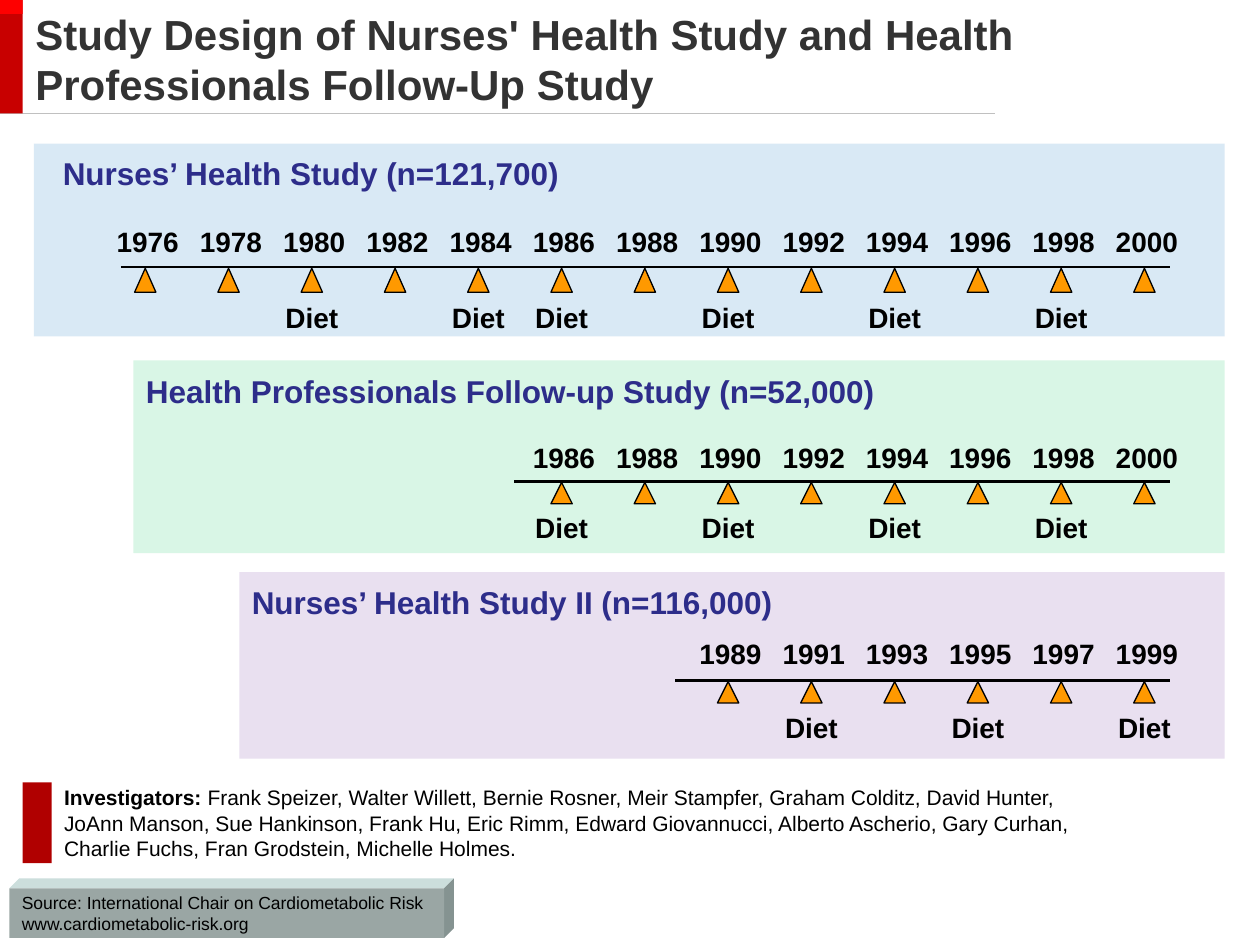
"""Build the study design slide with three cohort timelines."""
from pptx import Presentation
from pptx.dml.color import RGBColor as RGB
from pptx.enum.shapes import MSO_CONNECTOR as CON, MSO_SHAPE as SHP
from pptx.enum.text import MSO_ANCHOR as ANC, MSO_AUTO_SIZE as AUTO, PP_ALIGN as ALN
from pptx.oxml.ns import qn
from pptx.util import Pt
from lxml.etree import SubElement as Sub

HUES = {
    "red": "C80000", "bright": "FE0000", "brick": "B00000", "rule": "C0C0C0",
    "blue": "0070C0", "green": "00C459", "plum": "7030A0", "navy": "2D2D8A",
    "title": "333333", "black": "000000", "white": "FFFFFF", "mark": "FF9900",
    "front": "9AA6A4", "top": "CCDEDC", "side": "859391",
}
STEP = 47.58
LAST = 654

STUDIES = [
    dict(hue="blue", panel=(19.4, 82.1, 680.4, 110.2),
         name="Nurses’ Health Study (n=121,700)", head=(28.8, 83.5, 635.8, 31),
         years=range(1976, 2001, 2), diet=(1980, 1984, 1986, 1990, 1994, 1998),
         start=69.1, axis=152.6, tall=13.7, year_top=124.6, diet_top=168.5),
    dict(hue="green", panel=(76.3, 205.9, 623.5, 110.2),
         name="Health Professionals Follow-up Study (n=52,000)",
         head=(76.3, 202.3, 446.4, 41.8),
         years=range(1986, 2001, 2), diet=(1986, 1990, 1994, 1998),
         start=293.8, axis=275, tall=12.2, year_top=248.4, diet_top=288),
    dict(hue="plum", panel=(136.8, 326.9, 563, 106.6),
         name="Nurses’ Health Study II (n=116,000)", head=(136.8, 323.3, 333.4, 41.8),
         years=range(1989, 2000, 2), diet=(1991, 1995, 1999),
         start=385.9, axis=388.8, tall=12.2, year_top=360, diet_top=402.5),
]
STAFF = (
    " Frank Speizer, Walter Willett, Bernie Rosner, Meir Stampfer, Graham Colditz, "
    "David Hunter, JoAnn Manson, Sue Hankinson, Frank Hu, Eric Rimm, "
    "Edward Giovannucci, Alberto Ascherio, Gary Curhan, Charlie Fuchs, "
    "Fran Grodstein, Michelle Holmes."
)


def color(hue):
    """Return the named colour."""
    return RGB.from_string(HUES[hue])


def paint(shape, hue, edge=None, alpha=None):
    """Fill a shape, with an optional outline and opacity in percent."""
    shape.shadow.inherit = False
    shape.fill.solid()
    shape.fill.fore_color.rgb = color(hue)
    if alpha:
        tint = shape.fill._xPr.find(qn("a:solidFill"))[0]
        Sub(tint, qn("a:alpha")).set("val", str(alpha * 1000))
    if edge:
        shape.line.color.rgb = color(edge)
        shape.line.width = Pt(0.75)
    else:
        shape.line.fill.background()


def block(slide, box, hue, kind=SHP.RECTANGLE, **look):
    """Add a filled preset shape."""
    shape = slide.shapes.add_shape(kind, *map(Pt, box))
    paint(shape, hue, **look)
    return shape


def facet(slide, points, hue):
    """Add a filled polygon."""
    first, *rest = [(Pt(x), Pt(y)) for x, y in points]
    build = slide.shapes.build_freeform(*first)
    build.add_line_segments(rest)
    paint(build.convert_to_shape(), hue)


def rule(slide, left, right, y, hue, width):
    """Add a level line."""
    line = slide.shapes.add_connector(CON.STRAIGHT, Pt(left), Pt(y), Pt(right), Pt(y))
    line.line.color.rgb = color(hue)
    line.line.width = Pt(width)
    Sub(line._element.spPr, qn("a:effectLst"))


def write(shape, lines, size, hue="black", bold=None, align=ALN.LEFT,
          anchor=ANC.MIDDLE, wrap=True):
    """Set and format the text of a shape."""
    frame = shape.text_frame
    frame.auto_size = AUTO.NONE
    frame.word_wrap = wrap
    frame.vertical_anchor = anchor
    frame.text = lines
    for para in frame.paragraphs:
        para.alignment = align
        font = para.font
        font.name, font.size, font.bold = "Arial", Pt(size), bold
        font.color.rgb = color(hue)
    return frame


def label(slide, box, text, size, **look):
    """Add a bold text box."""
    write(slide.shapes.add_textbox(*map(Pt, box)), text, size, bold=True, **look)


def study(slide, name, hue, panel, head, years, diet, start, axis, tall,
          year_top, diet_top):
    """Add one study panel with its timeline."""
    block(slide, panel, hue, alpha=15)
    label(slide, head, name, 18, hue="navy")
    rule(slide, start, 668.5, axis, "black", 1.5)
    tag = dict(anchor=ANC.TOP, wrap=False)
    for i, year in enumerate(reversed(years)):
        x = LAST - i * STEP
        block(slide, (x - 6.1, axis + 0.7, 12.2, tall), "mark",
              SHP.FLOWCHART_EXTRACT, edge="black")
        label(slide, (x - 24.2, year_top, 50.4, 26.6), str(year), 16,
              align=ALN.RIGHT, **tag)
        if year in diet:
            label(slide, (x - 22.7, diet_top, 45.4, 26.6), "Diet", 16,
                  align=ALN.CENTER, **tag)


def header(slide):
    """Add the title and its red band."""
    rule(slide, 0, 568.8, 64.8, "rule", 0.75)
    block(slide, (0, 0, 13, 64.8), "red")
    block(slide, (0, 0, 13, 7.9), "bright")
    title = slide.shapes.title
    title.left, title.top, title.width, title.height = map(Pt, (13, 0.7, 664.6, 65.5))
    write(title, "Study Design of Nurses' Health Study and Health "
          "Professionals Follow-Up Study", 24, "title", True)


def credits(slide):
    """Add the list of investigators."""
    panel = block(slide, (29.5, 447.1, 617.8, 46.1), "white")
    frame = write(panel, "Investigators:", 12)
    frame.margin_right = Pt(21)
    para = frame.paragraphs[0]
    para.runs[0].font.bold = True
    para.add_run().text = STAFF
    block(slide, (13, 447.1, 16.5, 46.1), "brick")


def source(slide):
    """Add the raised source plate."""
    left, right, top, base, deep = 5.4, 253.8, 507.6, 536, 5.6
    facet(slide, [(left, top), (left + deep, top - deep),
                  (right + deep, top - deep), (right, top)], "top")
    facet(slide, [(right, top), (right + deep, top - deep),
                  (right + deep, base - deep), (right, base)], "side")
    plate = block(slide, (left, top, right - left, base - top), "front")
    write(plate, "Source: International Chair on Cardiometabolic Risk\n"
          "www.cardiometabolic-risk.org", 10)


def main():
    """Build and save the slide."""
    deck = Presentation()
    deck.slide_width, deck.slide_height = Pt(720), Pt(540)
    slide = deck.slides.add_slide(deck.slide_layouts[5])
    header(slide)
    for item in STUDIES:
        study(slide, **item)
    credits(slide)
    source(slide)
    deck.save("out.pptx")


if __name__ == "__main__":
    main()
